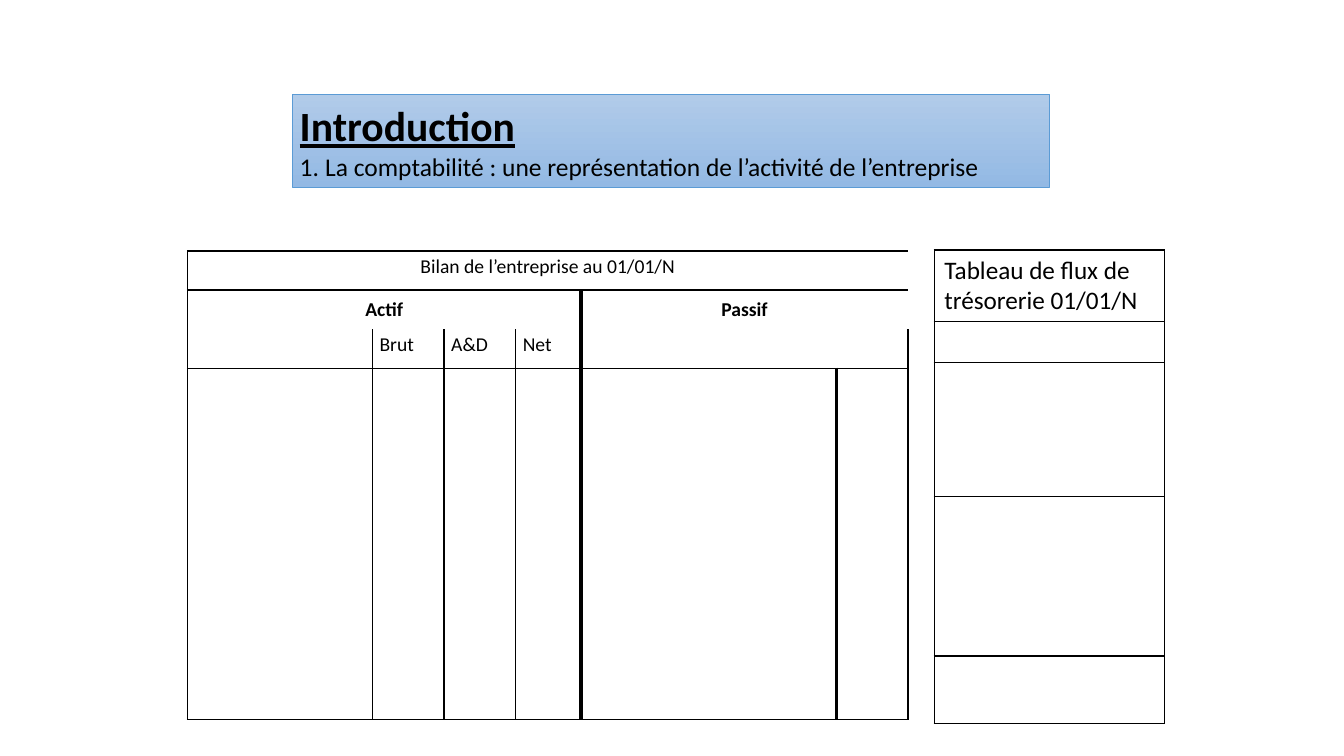
import pptx
import pptx.util
import pptx.dml.color
import pptx.enum.shapes
import pptx.enum.text
import pptx.oxml

Pt = pptx.util.Pt
Align = pptx.enum.text.PP_ALIGN
Anchor = pptx.enum.text.MSO_ANCHOR
INK = {"text": "000000", "edge": "5B9BD5", "top": "B1CBE9", "base": "93B9E4"}
NS = "http://schemas.openxmlformats.org/drawingml/2006/main"


def color(name):
    return pptx.dml.color.RGBColor.from_string(INK[name])


def add_run(para, text, size, bold=False, under=False):
    run = para.add_run()
    run.text = text
    font = run.font
    font.name = "Calibri"
    font.size = Pt(size)
    font.bold = bold
    font.underline = under
    font.color.rgb = color("text")


def set_inset(box, side, edge):
    box.margin_left = box.margin_right = Pt(side)
    box.margin_top = box.margin_bottom = Pt(edge)


def add_edge(cell, side, width):
    if width:
        paint = f'<a:solidFill><a:srgbClr val="{INK["text"]}"/></a:solidFill>'
    else:
        paint = "<a:noFill/>"
    line = pptx.oxml.parse_xml(
        f'<a:ln{side} xmlns:a="{NS}" w="{Pt(width)}">{paint}</a:ln{side}>')
    cell._tc.get_or_add_tcPr().append(line)


def add_grid(slide, left, top, cols, rows, vert, horiz, inset):
    table = slide.shapes.add_table(
        len(rows), len(cols), Pt(left), Pt(top), Pt(sum(cols)), Pt(sum(rows))).table
    table.first_row = table.horz_banding = False
    for col, width in zip(table.columns, cols):
        col.width = Pt(width)
    for row, height in zip(table.rows, rows):
        row.height = Pt(height)
    for r in range(len(rows)):
        for c in range(len(cols)):
            cell = table.cell(r, c)
            set_inset(cell, *inset)
            add_edge(cell, "L", vert(r, c))
            add_edge(cell, "R", vert(r, c + 1))
            add_edge(cell, "T", horiz(r))
            add_edge(cell, "B", horiz(r + 1))
            cell.fill.background()
    return table


def fill_cell(table, row, col, text, size, bold=False, span=1):
    cell = table.cell(row, col)
    if span > 1:
        cell.merge(table.cell(row, col + span - 1))
    para = cell.text_frame.paragraphs[0]
    para.alignment = Align.CENTER if span > 1 else Align.LEFT
    cell.vertical_anchor = Anchor.MIDDLE if bold else Anchor.TOP
    add_run(para, text, size, bold)


def add_title(slide):
    box = slide.shapes.add_shape(
        pptx.enum.shapes.MSO_SHAPE.RECTANGLE, Pt(208.8), Pt(67.5), Pt(541), Pt(66.4))
    box.shadow.inherit = False
    box.fill.gradient()
    box.fill.gradient_angle = 270
    for stop, name, place in zip(box.fill.gradient_stops, ("top", "base"), (0, 1)):
        stop.color.rgb = color(name)
        stop.position = place
    box.line.color.rgb = color("edge")
    box.line.width = Pt(0.5)
    frame = box.text_frame
    frame.word_wrap = True
    frame.vertical_anchor = Anchor.MIDDLE
    set_inset(frame, 5.3, 2.7)
    para = frame.paragraphs[0]
    para.alignment = Align.LEFT
    add_run(para, "Introduction", 29.7, True, True)
    para.add_line_break()
    add_run(para, "1.", 18.2)
    add_run(para, " ", 18.9)
    add_run(para, "La comptabilité : une représentation de l’activité de l’entreprise", 18.2)


def sheet_edge(row, col):
    if col in (0, 6):
        return 1
    if col == 4:
        return 3 if row else 0
    if col == 5:
        return 2.25 if row > 2 else 0
    return 1 if row > 1 else 0


def add_sheet(slide):
    table = add_grid(
        slide, 133.9, 179.3, [132, 51.2, 51.2, 46.7, 182.6, 51.1], [27.9] * 12,
        sheet_edge, lambda row: 1 if row in (0, 1, 3, 12) else 0, (5.2, 2.8))
    fill_cell(table, 0, 0, "Bilan de l’entreprise au 01/01/N", 14, span=6)
    fill_cell(table, 1, 0, "Actif", 14, True, 4)
    fill_cell(table, 1, 4, "Passif", 14, True, 2)
    for col, text in enumerate(("Brut", "A&D", "Net"), 1):
        fill_cell(table, 2, col, text, 14)


def add_flow(slide):
    table = add_grid(
        slide, 667.4, 178.6, [164.5], [49, 28.1, 95.8, 113.8, 48.2],
        lambda row, col: 1, lambda row: 1, (7.2, 3.6))
    fill_cell(table, 0, 0, "Tableau de flux de trésorerie 01/01/N", 18)


def main():
    deck = pptx.Presentation()
    deck.slide_width = Pt(960)
    deck.slide_height = Pt(540)
    slide = deck.slides.add_slide(deck.slide_layouts[6])
    add_sheet(slide)
    add_title(slide)
    add_flow(slide)
    deck.save("out.pptx")


if __name__ == "__main__":
    main()
